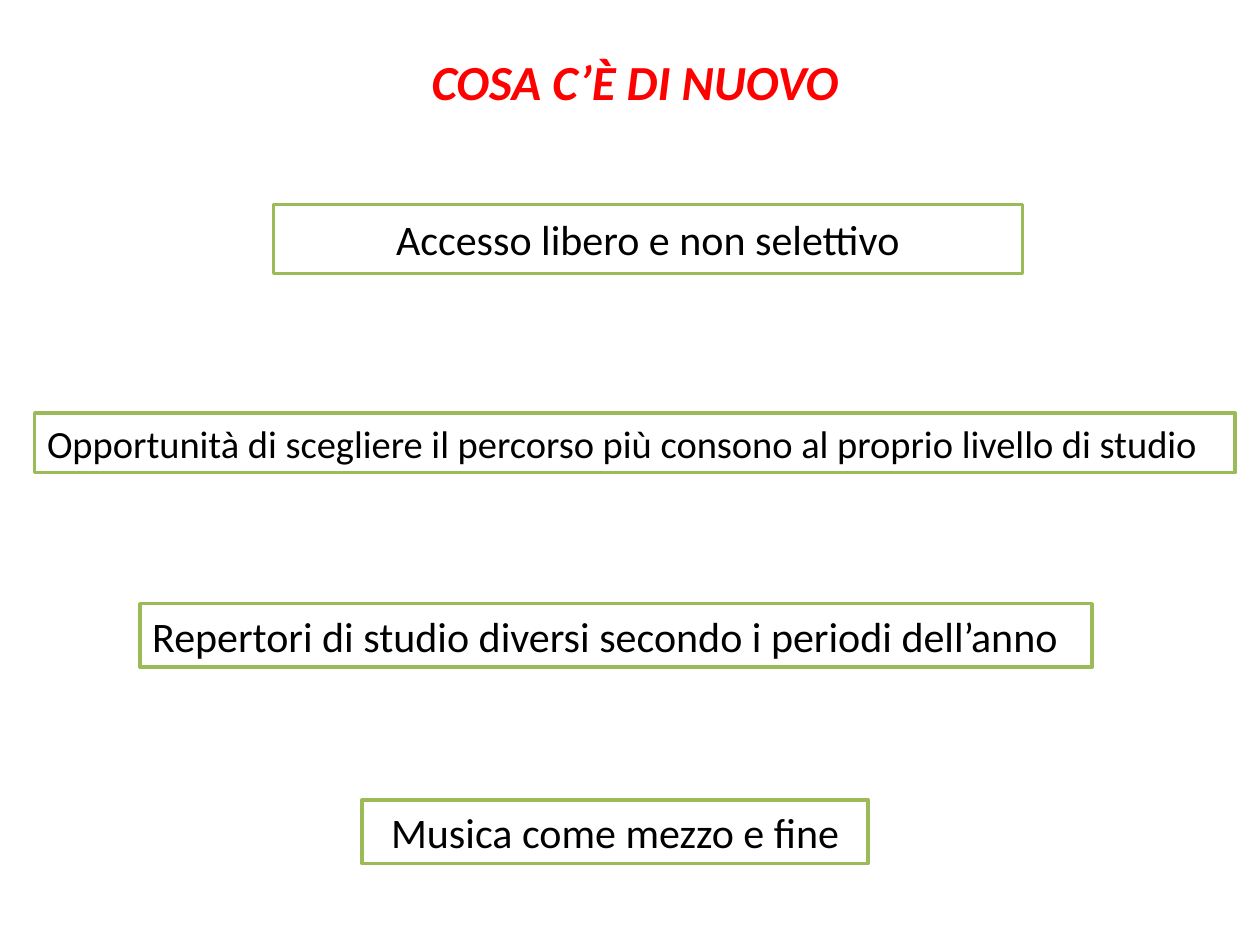
"""Build the slide on what is new in the music course."""
from dataclasses import dataclass

from pptx import Presentation
from pptx import util as u
from pptx.dml.color import RGBColor
from pptx.enum import shapes, text


@dataclass(frozen=True)
class Theme:
    """Colours, font and type sizes of the slide."""
    font: str = "Calibri"
    heading: str = "FF0000"
    body: str = "000000"
    panel: str = "FFFFFF"
    border: str = "9BBB59"
    border_width: float = 2
    heading_size: int = 28
    body_size: int = 24
    small_size: int = 22


class SlideBuilder:
    """Draw titles and framed statements on one page."""

    def __init__(self, page, theme):
        """Keep the page and its theme."""
        self.page = page
        self.theme = theme

    def set_text(self, box, wording, size, colour, align, strong=False):
        """Fill a box with one styled paragraph."""
        frame = box.text_frame
        frame.text = wording
        frame.word_wrap = True
        frame.auto_size = text.MSO_AUTO_SIZE.NONE
        frame.vertical_anchor = text.MSO_ANCHOR.MIDDLE
        para = frame.paragraphs[0]
        para.alignment = align
        for span in para.runs:
            span.font.name = self.theme.font
            span.font.size = u.Pt(size)
            span.font.color.rgb = RGBColor.from_string(colour)
            span.font.bold = span.font.italic = strong

    def title(self, wording, left, top, width, height):
        """Place and format the title placeholder."""
        box = self.page.shapes.title
        box.left, box.top, box.width, box.height = map(u.Cm, (left, top, width, height))
        self.set_text(box, wording, self.theme.heading_size, self.theme.heading,
                      text.PP_ALIGN.CENTER, strong=True)

    def statement(self, wording, left, top, width, height, size, align):
        """Add a framed rectangle holding one statement."""
        box = self.page.shapes.add_shape(
            shapes.MSO_SHAPE.RECTANGLE, *map(u.Cm, (left, top, width, height)))
        box.shadow.inherit = False
        box.fill.solid()
        box.fill.fore_color.rgb = RGBColor.from_string(self.theme.panel)
        box.line.color.rgb = RGBColor.from_string(self.theme.border)
        box.line.width = u.Pt(self.theme.border_width)
        self.set_text(box, wording, size, self.theme.body, align)


def main():
    """Build and save the deck."""
    deck = Presentation()
    deck.slide_width, deck.slide_height = u.Cm(25.4), u.Cm(19.05)
    theme = Theme()
    builder = SlideBuilder(deck.slides.add_slide(deck.slide_layouts[5]), theme)
    builder.title("COSA C’È DI NUOVO", 3, 0.91, 19.6, 1.45)
    centre, left = text.PP_ALIGN.CENTER, text.PP_ALIGN.LEFT
    statements = [
        ("Accesso libero e non selettivo",
         5.51, 4.12, 15.1, 1.4, theme.body_size, centre),
        ("Opportunità di scegliere il percorso più consono al proprio livello di studio",
         0.7, 8.33, 24.2, 1.2, theme.small_size, left),
        ("Repertori di studio diversi secondo i periodi dell’anno",
         2.82, 12.17, 19.2, 1.28, theme.body_size, left),
        ("Musica come mezzo e fine",
         7.3, 16.13, 10.2, 1.28, theme.body_size, centre),
    ]
    for statement in statements:
        builder.statement(*statement)
    deck.save("out.pptx")


if __name__ == "__main__":
    main()
